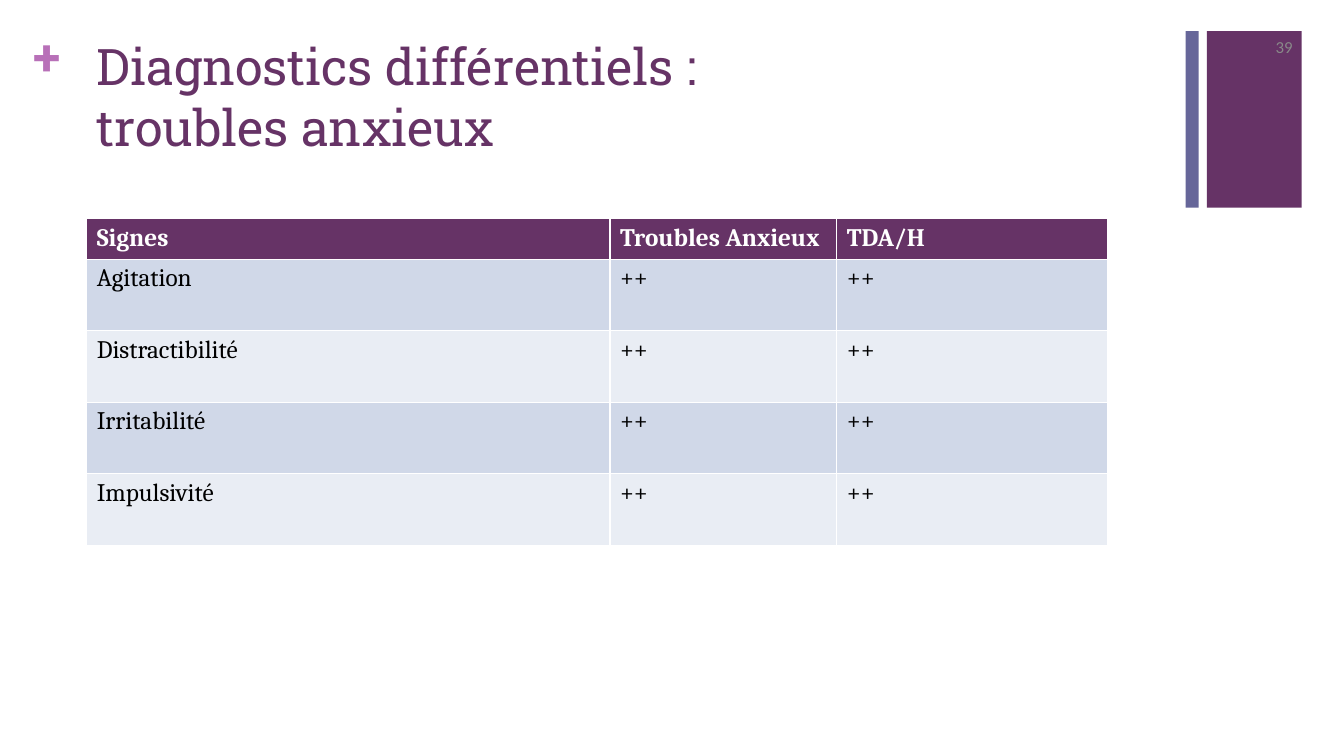
"""Build the slide comparing anxiety disorders with TDA/H."""
from pptx import Presentation
from pptx.dml.color import RGBColor
from pptx.enum import shapes, text
from pptx.util import Inches, Pt

PURPLE = "663366"


def color(value):
    return RGBColor.from_string(value)


def style(para, size, font, shade, bold=False):
    para.font.size = Pt(size)
    para.font.name = font
    para.font.color.rgb = color(shade)
    para.font.bold = bold


deck = Presentation()
deck.slide_width = Inches(13.33)
deck.slide_height = Inches(7.5)
page = deck.slides.add_slide(deck.slide_layouts[5])

for left, width, shade in [(11.97, 0.94, PURPLE), (11.76, 0.13, "666699")]:
    bar = page.shapes.add_shape(shapes.MSO_SHAPE.RECTANGLE, Inches(left), Inches(0.31),
                                Inches(width), Inches(1.75))
    bar.shadow.inherit = False
    bar.fill.solid()
    bar.fill.fore_color.rgb = color(shade)
    bar.line.fill.background()

plus = page.shapes.add_textbox(Inches(0.33), Inches(0.25), Inches(0.38), Inches(0.61))
frame = plus.text_frame
frame.margin_left = frame.margin_top = frame.margin_right = frame.margin_bottom = 0
frame.word_wrap = True
frame.text = "+"
style(frame.paragraphs[0], 36, "Roboto Slab", "B870B8", True)

number = page.shapes.add_textbox(Inches(12.11), Inches(0.26), Inches(0.81), Inches(0.4))
frame = number.text_frame
frame.word_wrap = True
frame.vertical_anchor = text.MSO_ANCHOR.MIDDLE
frame.text = "39"
frame.paragraphs[0].alignment = text.PP_ALIGN.RIGHT
style(frame.paragraphs[0], 12, "Calibri", "898989")

title = page.shapes.title
title.left, title.top = Inches(0.86), Inches(0.34)
title.width, title.height = Inches(10.34), Inches(1.22)
frame = title.text_frame
frame.auto_size = text.MSO_AUTO_SIZE.NONE
frame.vertical_anchor = text.MSO_ANCHOR.MIDDLE
frame.text = "Diagnostics différentiels : \vtroubles anxieux"
frame.paragraphs[0].alignment = text.PP_ALIGN.LEFT
style(frame.paragraphs[0], 36, "Roboto Slab", PURPLE)

signs = ["Agitation", "Distractibilité", "Irritabilité", "Impulsivité"]
rows = [["Signes", "Troubles Anxieux", "TDA/H"]] + [[sign, "++", "++"] for sign in signs]
table = page.shapes.add_table(len(rows), 3, Inches(0.86), Inches(2.17),
                              Inches(10.13), Inches(3.23)).table
for column, width in zip(table.columns, [5.19, 2.25, 2.69]):
    column.width = Inches(width)
for index, row in enumerate(rows):
    header = index == 0
    table.rows[index].height = Inches(0.39 if header else 0.71)
    fill = PURPLE if header else ("E9EDF4", "D0D8E8")[index % 2]
    for cell, words in zip(table.rows[index].cells, row):
        cell.text = words
        cell.fill.solid()
        cell.fill.fore_color.rgb = color(fill)
        style(cell.text_frame.paragraphs[0], 18, "Cambria",
              "FFFFFF" if header else "000000", header)

deck.save("out.pptx")
